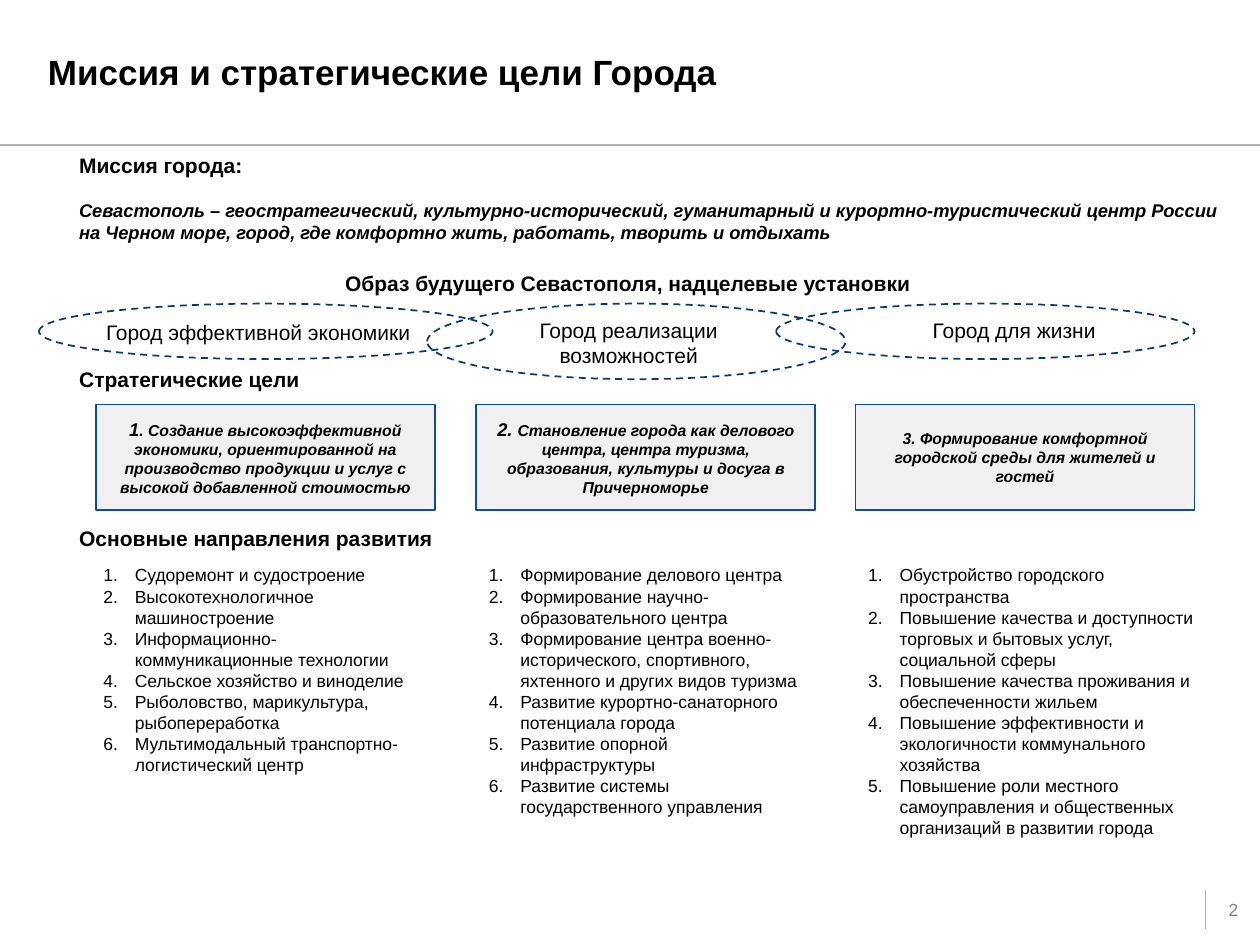
from lxml import etree
from pptx import Presentation
from pptx.dml.color import RGBColor
from pptx.enum.dml import MSO_LINE
from pptx.enum.shapes import MSO_CONNECTOR, MSO_SHAPE
from pptx.enum.text import MSO_ANCHOR, MSO_AUTO_SIZE, PP_ALIGN
from pptx.oxml.ns import qn
from pptx.util import Inches, Pt

LEFT, CENTER = PP_ALIGN.LEFT, PP_ALIGN.CENTER
TOP, MIDDLE = MSO_ANCHOR.TOP, MSO_ANCHOR.MIDDLE
NO_FIT = MSO_AUTO_SIZE.NONE
RECT, OVAL = MSO_SHAPE.RECTANGLE, MSO_SHAPE.OVAL
STRAIGHT, DASH = MSO_CONNECTOR.STRAIGHT, MSO_LINE.DASH

BLACK = RGBColor(0x00, 0x00, 0x00)
WHITE = RGBColor(0xFF, 0xFF, 0xFF)
RULE_GRAY = RGBColor(0xB2, 0xB2, 0xB2)
NUMBER_GRAY = RGBColor(0x7F, 0x7F, 0x7F)
BOX_FILL = RGBColor(0xF0, 0xF0, 0xF0)
BOX_LINE = RGBColor(0x0E, 0x4D, 0x99)
OVAL_LINE = RGBColor(0x0A, 0x39, 0x71)
FONT = "Arial"

MISSION = ("Севастополь – геостратегический, культурно-исторический, гуманитарный "
           "и курортно-туристический центр России на Черном море, город, где "
           "комфортно жить, работать, творить и отдыхать")

# Ellipse box, label box, label lines
VISIONS = [
    ((0.31, 2.41, 3.6, 0.44), (0.71, 2.49, 2.68, 0.3), ["Город эффективной экономики"]),
    ((3.39, 2.41, 3.32, 0.6), (3.65, 2.47, 2.68, 0.5), ["Город реализации", "возможностей"]),
    ((6.16, 2.41, 3.32, 0.44), (6.71, 2.47, 2.68, 0.3), ["Город для жизни"]),
]

# Box left, runs as (text, size)
GOALS = [
    (0.76, [("1", 10.5),
            (". Создание высокоэффективной экономики, ориентированной на производство "
             "продукции и услуг с высокой добавленной стоимостью", 9)]),
    (3.78, [("2. ", 10.5),
            ("Становление города как делового центра, центра туризма, образования, "
             "культуры и досуга в Причерноморье", 9)]),
    (6.79, [("3. Формирование комфортной городской среды для жителей и гостей", 9)]),
]

# Placeholder index, box, items
DIRECTIONS = [
    (1, (0.72, 4.43, 2.82, 2.61), [
        "Судоремонт и судостроение",
        "Высокотехнологичное машиностроение",
        "Информационно-коммуникационные технологии",
        "Сельское хозяйство и виноделие",
        "Рыболовство, марикультура, рыбопереработка",
        "Мультимодальный транспортно-логистический центр"]),
    (2, (3.78, 4.43, 2.69, 2.52), [
        "Формирование делового центра",
        "Формирование научно- образовательного центра",
        "Формирование центра военно-исторического, спортивного, яхтенного "
        "и других видов туризма",
        "Развитие курортно-санаторного потенциала города",
        "Развитие опорной инфраструктуры",
        "Развитие системы государственного управления"]),
    (4, (6.79, 4.43, 2.8, 2.68), [
        "Обустройство городского пространства",
        "Повышение качества и доступности торговых и бытовых услуг, социальной сферы",
        "Повышение качества проживания и обеспеченности жильем",
        "Повышение эффективности и экологичности коммунального хозяйства",
        "Повышение роли местного самоуправления и общественных организаций "
        "в развитии города"]),
]


def inches(box):
    return [Inches(v) for v in box]


def place(sp, box):
    sp.left, sp.top, sp.width, sp.height = inches(box)


def setup_frame(sp, anchor=TOP):
    tf = sp.text_frame
    tf.word_wrap = True
    tf.auto_size = NO_FIT
    tf.vertical_anchor = anchor
    return tf


def add_run(p, text, size, bold=False, italic=False, color=BLACK):
    r = p.add_run()
    r.text = text
    f = r.font
    f.name, f.size, f.bold, f.italic = FONT, Pt(size), bold, italic
    f.color.rgb = color


def add_label(slide, box, lines, size=12, bold=False, align=LEFT):
    tf = setup_frame(slide.shapes.add_textbox(*inches(box)))
    for i, line in enumerate(lines):
        p = tf.add_paragraph() if i else tf.paragraphs[0]
        p.alignment = align
        add_run(p, line, size, bold)
    return tf


def add_outlined(slide, kind, box, fill=None, line=None):
    sp = slide.shapes.add_shape(kind, *inches(box))
    sp.shadow.inherit = False
    if fill is None:
        sp.fill.background()
    else:
        sp.fill.solid()
        sp.fill.fore_color.rgb = fill
    if line is None:
        sp.line.fill.background()
    else:
        sp.line.color.rgb = line
        sp.line.width = Pt(1)
    return sp


def add_rule(slide, x1, y1, x2, y2, width):
    line = slide.shapes.add_connector(STRAIGHT, *inches((x1, y1, x2, y2)))
    line.line.color.rgb = RULE_GRAY
    line.line.width = Pt(width)
    etree.SubElement(line._element.spPr, qn("a:effectLst"))


def add_title(slide, box):
    title = slide.shapes.title
    place(title, box)
    p = setup_frame(title, MIDDLE).paragraphs[0]
    p.alignment = LEFT
    add_run(p, "Миссия и стратегические цели Города", 20, bold=True)


def add_page_number(slide, box):
    sp = add_outlined(slide, RECT, box, fill=WHITE)
    tf = setup_frame(sp, MIDDLE)
    tf.margin_left = tf.margin_right = tf.margin_top = tf.margin_bottom = Inches(0.05)
    p = tf.paragraphs[0]
    p.alignment = CENTER
    add_run(p, "2", 10, color=NUMBER_GRAY)


def add_mission(slide, box):
    p = add_label(slide, box, ["Миссия города:"], bold=True).add_paragraph()
    p.space_before = Pt(12.5)
    add_run(p, MISSION, 10.5, bold=True, italic=True)


def add_goal(slide, box, runs):
    sp = add_outlined(slide, RECT, box, BOX_FILL, BOX_LINE)
    p = setup_frame(sp, MIDDLE).paragraphs[0]
    p.alignment = CENTER
    for text, size in runs:
        add_run(p, text, size, bold=True, italic=True)


def add_vision(slide, oval_box, label_box, lines):
    add_label(slide, label_box, lines, align=CENTER)
    add_outlined(slide, OVAL, oval_box, line=OVAL_LINE).line.dash_style = DASH


def fill_numbered_list(sp, box, items):
    place(sp, box)
    tf = setup_frame(sp)
    for i, item in enumerate(items):
        p = tf.add_paragraph() if i else tf.paragraphs[0]
        p.alignment = LEFT
        p.space_before = Pt(0)
        pPr = p._p.get_or_add_pPr()
        pPr.set("marL", str(Inches(0.25)))
        pPr.set("indent", str(-Inches(0.25)))
        etree.SubElement(pPr, qn("a:buFont"), typeface=FONT)
        etree.SubElement(pPr, qn("a:buAutoNum"), type="arabicPeriod")
        add_run(p, item, 10)


def main():
    prs = Presentation()
    prs.slide_width, prs.slide_height = Inches(10), Inches(7.5)
    slide = prs.slides.add_slide(prs.slide_layouts.get_by_name("Comparison"))
    bodies = {ph.placeholder_format.idx: ph for ph in slide.placeholders}

    add_rule(slide, 0, 1.15, 10, 1.15, 1)
    add_rule(slide, 9.57, 7.06, 9.57, 7.37, 0.75)
    add_title(slide, (0.28, 0.23, 9.46, 0.67))
    add_page_number(slide, (9.58, 7.09, 0.42, 0.26))
    add_mission(slide, (0.53, 1.16, 9.3, 0.83))

    add_label(slide, (2.64, 2.1, 5.48, 0.3),
              ["Образ будущего Севастополя, надцелевые установки"], bold=True)
    for vision in VISIONS:
        add_vision(slide, *vision)

    add_label(slide, (0.53, 2.86, 3.62, 0.3), ["Стратегические цели"], bold=True)
    for left, runs in GOALS:
        add_goal(slide, (left, 3.21, 2.69, 0.84), runs)

    add_label(slide, (0.53, 4.12, 3.62, 0.3), ["Основные направления развития"], bold=True)
    for idx, box, items in DIRECTIONS:
        fill_numbered_list(bodies.pop(idx), box, items)
    unused = bodies[3]._element
    unused.getparent().remove(unused)

    prs.save("out.pptx")


if __name__ == "__main__":
    main()
